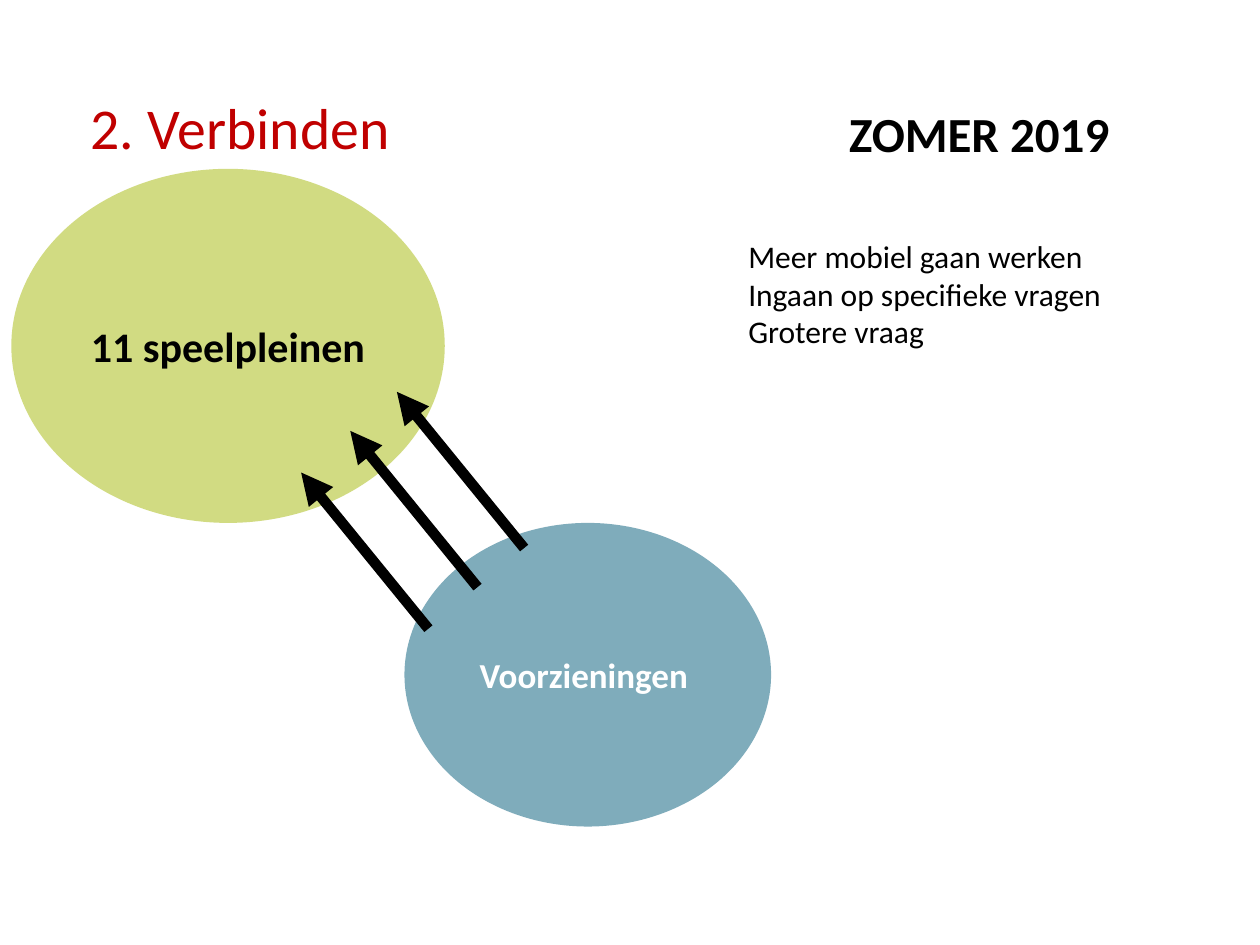
from pptx import Presentation
from pptx import util as u
from pptx.dml.color import RGBColor
from pptx.enum import shapes, text
from pptx.oxml.ns import qn
from lxml import etree

BLACK, WHITE, RED = "000000", "FFFFFF", "C00000"
GREEN, BLUE = "A5B807", "015A78"
WIDTH, HEIGHT = 10, 7.5


def colour(value):
    return RGBColor.from_string(value)


def inches(*lengths):
    return [u.Inches(length) for length in lengths]


def write(shape, lines, size, color=BLACK, bold=False,
          align=text.PP_ALIGN.LEFT, anchor=text.MSO_ANCHOR.TOP):
    frame = shape.text_frame
    frame.word_wrap = True
    frame.auto_size = text.MSO_AUTO_SIZE.NONE
    frame.vertical_anchor = anchor
    frame.text = "\n".join(lines)
    for paragraph in frame.paragraphs:
        paragraph.alignment = align
        for run in paragraph.runs:
            run.font.name = "Calibri"
            run.font.size = u.Pt(size)
            run.font.bold = bold
            run.font.color.rgb = colour(color)


def add_title(slide, box, words):
    title = slide.shapes.title
    title.left, title.top, title.width, title.height = inches(*box)
    write(title, [words], 33, RED)


def add_note(slide, box, lines, size, bold=False):
    write(slide.shapes.add_textbox(*inches(*box)), lines, size, bold=bold)


def add_bubble(slide, box, words, fill, size, color):
    """Add a half-transparent ellipse with a centred label."""
    bubble = slide.shapes.add_shape(shapes.MSO_SHAPE.OVAL, *inches(*box))
    bubble.shadow.inherit = False
    bubble.fill.solid()
    bubble.fill.fore_color.rgb = colour(fill)
    solid = bubble.fill._xPr.find(qn("a:solidFill"))
    etree.SubElement(solid[0], qn("a:alpha"), val="50000")
    bubble.line.fill.background()
    write(bubble, [words], size, color, True,
          text.PP_ALIGN.CENTER, text.MSO_ANCHOR.MIDDLE)


def add_arrow(slide, start, end):
    arrow = slide.shapes.add_connector(
        shapes.MSO_CONNECTOR.STRAIGHT, *inches(*start, *end))
    arrow.line.color.rgb = colour(BLACK)
    arrow.line.width = u.Pt(6)
    etree.SubElement(arrow.line._get_or_add_ln(), qn("a:tailEnd"), type="triangle")
    etree.SubElement(arrow._element.spPr, qn("a:effectLst"))


def main():
    deck = Presentation()
    deck.slide_width, deck.slide_height = inches(WIDTH, HEIGHT)
    slide = deck.slides.add_slide(deck.slide_layouts[5])

    add_title(slide, (0.62, 0.68, 8.75, 0.66), "2. Verbinden")
    add_bubble(slide, (0.09, 1.34, 3.44, 2.81), "11 speelpleinen ", GREEN, 24, BLACK)
    add_bubble(slide, (3.21, 4.15, 2.91, 2.41), "Voorzieningen ", BLUE, 20, WHITE)
    add_note(slide, (6.64, 0.77, 2.71, 0.57), ["ZOMER 2019"], 28, bold=True)

    run, rise = 1.01, 1.24
    for x, y in ((3.79, 4.66), (4.16, 4.35), (3.4, 4.99)):
        add_arrow(slide, (x, y), (x - run, y - rise))

    add_note(slide, (5.84, 1.83, 3.25, 1.01),
             ["Meer mobiel gaan werken", "Ingaan op specifieke vragen",
              "Grotere vraag"], 18)
    deck.save("out.pptx")


if __name__ == "__main__":
    main()
